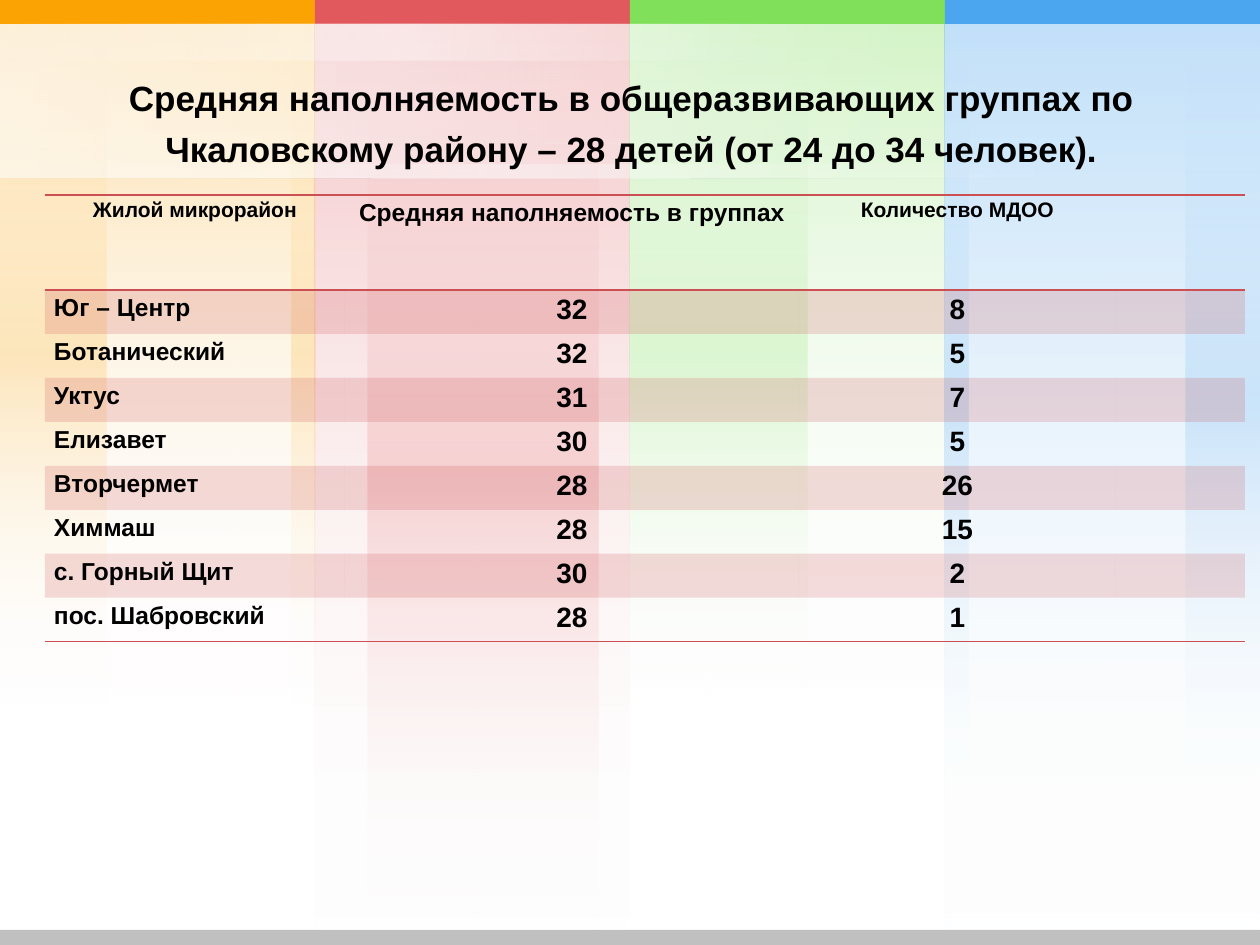
from pptx import Presentation
from pptx.dml.color import RGBColor
from pptx.enum.shapes import MSO_SHAPE
from pptx.enum.text import MSO_ANCHOR, MSO_AUTO_SIZE, PP_ALIGN
from pptx.oxml import parse_xml
from pptx.oxml.ns import nsdecls, qn
from pptx.util import Pt

EMU_PER_PX = 914400 / 126
WIDTH, HEIGHT = 1260, 945
ORANGE, RED, GREEN, BLUE = "FCA304", "E1595C", "80E05A", "4BA5EF"
WHITE, BLACK, GRAY, TABLE_RED = "FFFFFF", "000000", "C0C0C0", "CC5053"
NO_STYLE = "{2D5ABB26-0587-4C30-8999-92F81FD0307C}"

TITLE = ["Средняя наполняемость в общеразвивающих группах по",
         "Чкаловскому району – 28 детей (от 24 до 34 человек)."]
HEADER = ["Жилой микрорайон", "Средняя наполняемость в группах",
          "Количество МДОО", ""]
DISTRICTS = [
    ("Юг – Центр", 32, 8),
    ("Ботанический", 32, 5),
    ("Уктус", 31, 7),
    ("Елизавет", 30, 5),
    ("Вторчермет", 28, 26),
    ("Химмаш", 28, 15),
    ("с. Горный Щит", 30, 2),
    ("пос. Шабровский", 28, 1),
]


def px(n):
    return round(n * EMU_PER_PX)


def rgb(color):
    return RGBColor.from_string(color)


def add_rect(s, x, y, w, h, color=None):
    sp = s.shapes.add_shape(MSO_SHAPE.RECTANGLE, px(x), px(y), px(w), px(h))
    sp.shadow.inherit = False
    sp.line.fill.background()
    if color:
        sp.fill.solid()
        sp.fill.fore_color.rgb = rgb(color)
    return sp


def add_fade(s, x, y, w, h, stops, rotation=0):
    """Add a rectangle with a downward gradient of (position, colour, opacity) stops."""
    sp = add_rect(s, x, y, w, h)
    sp.rotation = rotation
    sp.fill.background()
    gs = "".join(
        f'<a:gs pos="{pos * 1000}"><a:srgbClr val="{color}">'
        f'<a:alpha val="{opacity * 1000}"/></a:srgbClr></a:gs>'
        for pos, color, opacity in stops)
    grad = parse_xml(
        f'<a:gradFill {nsdecls("a")} rotWithShape="1"><a:gsLst>{gs}</a:gsLst>'
        '<a:lin ang="5400000" scaled="0"/></a:gradFill>')
    sp_pr = sp.element.spPr
    sp_pr.replace(sp_pr.find(qn("a:noFill")), grad)


def fade_out(color, opacity):
    return [(0, color, opacity), (100, WHITE, 0)]


def glow(color, opacity):
    return [(0, WHITE, 0), (50, color, opacity), (100, WHITE, 0)]


def add_panel(s, x, y, w, h, color, stripes, stripe_h):
    """Add a fading column; stripes are (offset, width) pairs inside it."""
    add_fade(s, x, y, w, h, fade_out(color, 20))
    for dx, stripe_w in stripes:
        add_fade(s, x + dx, y, stripe_w, stripe_h, glow(color, 20))
    add_fade(s, x, y, w, h, fade_out(color, 20))


def add_background(s, x, y, w, h):
    col = w // 4
    panels = [
        (1, 945, RED, [(53, 231)], 945),
        (2, 708, GREEN, [(0, 178)], 708),
        (3, 941, BLUE, [(0, 24), (241, 74)], 803),
        (0, 708, ORANGE, [(292, 23), (0, 106)], 708),
    ]
    for i, panel_h, color, stripes, stripe_h in panels:
        add_panel(s, x + i * col, y, col, panel_h, color, stripes, stripe_h)
    for i, color in enumerate([ORANGE, RED, GREEN, BLUE]):
        add_rect(s, x + i * col, y, col, 24, color)
    add_title_glow(s, x, y)
    add_rect(s, x, y + h - 15, w, 15, GRAY)


def add_title_glow(s, x, y):
    """Add white bands turned on their side, fading to the right."""
    sheet = (397, -372, 154, 946, fade_out(WHITE, 35))
    bands = [
        (524, -359, 13, 1061, glow(WHITE, 35)),
        sheet,
        (386, -362, 37, 808, glow(WHITE, 35)),
        sheet,
    ]
    for dx, dy, w, h, stops in bands:
        add_fade(s, x + dx, y + dy, w, h, stops, rotation=270)


def format_paragraph(p, size, align):
    p.alignment = align
    p.font.name = "Arial"
    p.font.size = Pt(size)
    p.font.bold = True
    p.font.color.rgb = rgb(BLACK)


def place_title(s, x, y, w, h):
    title = s.shapes.title
    title.left, title.top, title.width, title.height = map(px, (x, y, w, h))
    tf = title.text_frame
    tf.text = "\n".join(TITLE)
    tf.word_wrap = True
    tf.auto_size = MSO_AUTO_SIZE.NONE
    tf.vertical_anchor = MSO_ANCHOR.BOTTOM
    for p in tf.paragraphs:
        format_paragraph(p, 20, PP_ALIGN.CENTER)
        p.space_before = Pt(5)
    s.shapes.element.append(title.element)  # bring in front of the background


def add_border(cell, side):
    cell._tc.get_or_add_tcPr().append(parse_xml(
        f'<a:ln{side} {nsdecls("a")} w="12700"><a:solidFill>'
        f'<a:srgbClr val="{TABLE_RED}"/></a:solidFill></a:ln{side}>'))


def fill_cell(cell, shaded):
    if not shaded:
        cell.fill.background()
        return
    cell.fill.solid()
    cell.fill.fore_color.rgb = rgb(TABLE_RED)
    color = cell._tc.tcPr.find(qn("a:solidFill")).find(qn("a:srgbClr"))
    color.append(parse_xml(f'<a:alpha {nsdecls("a")} val="20000"/>'))


def add_district_table(s, x, y, col_widths, row_heights):
    rows = [HEADER] + [(*district, "") for district in DISTRICTS]
    table = s.shapes.add_table(
        len(rows), len(HEADER), px(x), px(y),
        px(sum(col_widths)), px(sum(row_heights))).table
    table._tbl.tblPr.find(qn("a:tableStyleId")).text = NO_STYLE
    for column, w in zip(table.columns, col_widths):
        column.width = px(w)
    for row, h in zip(table.rows, row_heights):
        row.height = px(h)

    header_sizes, body_sizes = (12, 14, 12, 12), (14, 16, 16, 16)
    for i, values in enumerate(rows):
        for j, value in enumerate(values):
            cell = table.cell(i, j)
            cell.margin_left = cell.margin_right = px(9)
            cell.margin_top = cell.margin_bottom = 0
            p = cell.text_frame.paragraphs[0]
            p.text = str(value)
            p.line_spacing = 1.15
            format_paragraph(
                p, body_sizes[j] if i else header_sizes[j],
                PP_ALIGN.JUSTIFY if i and j == 0 else PP_ALIGN.CENTER)
            if i == 0:
                add_border(cell, "T")
            if i in (0, len(rows) - 1):
                add_border(cell, "B")
            fill_cell(cell, shaded=i % 2 == 1)


def main():
    prs = Presentation()
    prs.slide_width, prs.slide_height = px(WIDTH), px(HEIGHT)
    s = prs.slides.add_slide(prs.slide_layouts[5])
    add_background(s, 0, 0, WIDTH, HEIGHT)
    place_title(s, 96, 66, 1071, 110)
    add_district_table(s, 45, 195, [300, 454, 317, 129],
                       [95] + [44] * len(DISTRICTS))
    prs.save("out.pptx")


if __name__ == "__main__":
    main()
